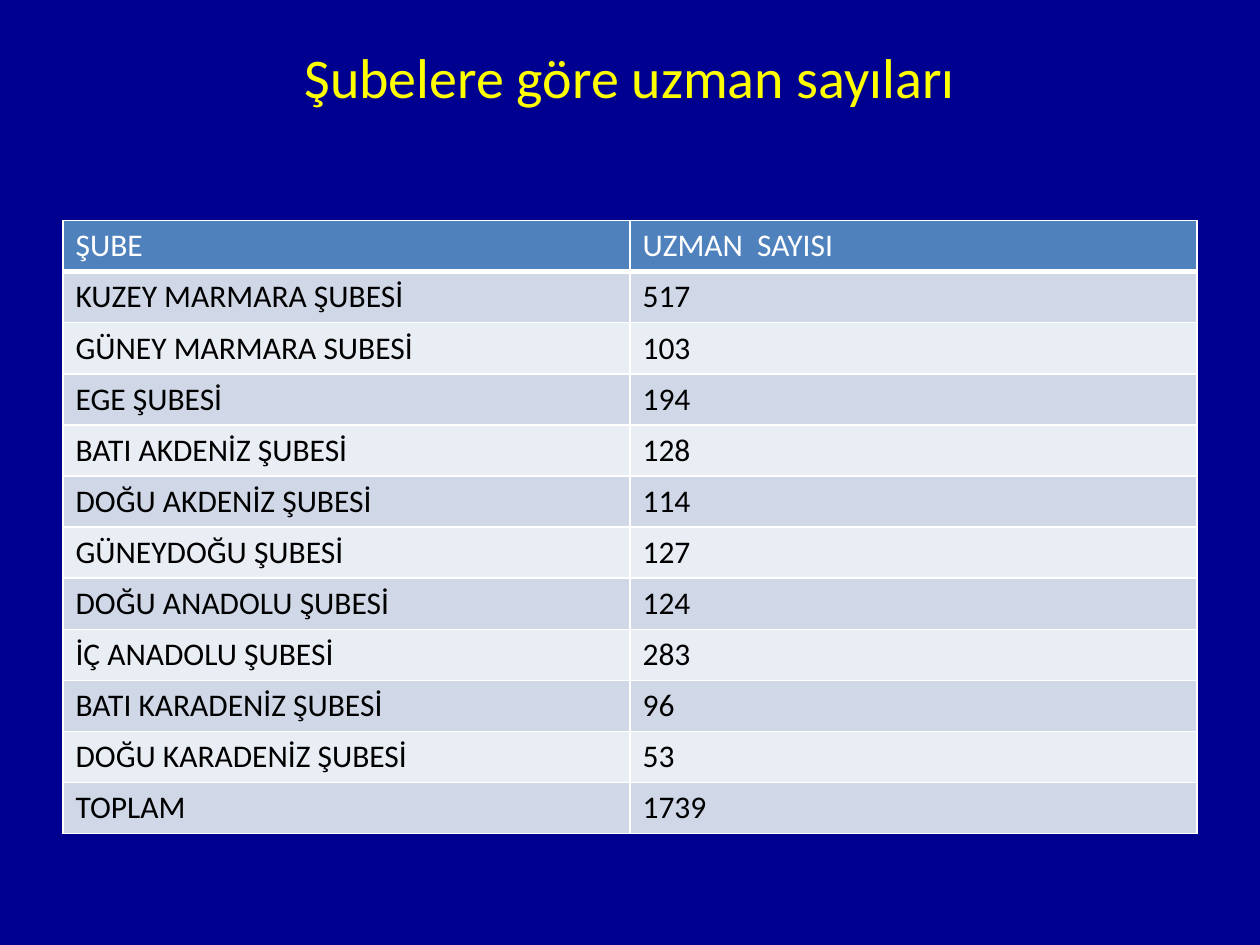
import pptx
import pptx.dml.color
import pptx.enum.text
import pptx.oxml.ns
import pptx.util
from lxml import etree

Inches = pptx.util.Inches
RGBColor = pptx.dml.color.RGBColor
PP_ALIGN = pptx.enum.text.PP_ALIGN
MSO_ANCHOR = pptx.enum.text.MSO_ANCHOR

NAVY = RGBColor(0x00, 0x00, 0x90)
YELLOW = RGBColor(0xFF, 0xFF, 0x00)
WHITE = RGBColor(0xFF, 0xFF, 0xFF)
BLACK = RGBColor(0x00, 0x00, 0x00)
HEADER_BLUE = RGBColor(0x4F, 0x81, 0xBD)
BANDS = (RGBColor(0xD0, 0xD8, 0xE8), RGBColor(0xE9, 0xED, 0xF4))

TITLE = "Şubelere göre uzman sayıları"
HEADINGS = ("ŞUBE", "UZMAN  SAYISI")
BRANCHES = [
    ("KUZEY MARMARA ŞUBESİ", "517"),
    ("GÜNEY MARMARA SUBESİ", "103"),
    ("EGE ŞUBESİ", "194"),
    ("BATI AKDENİZ ŞUBESİ", "128"),
    ("DOĞU AKDENİZ ŞUBESİ", "114"),
    ("GÜNEYDOĞU ŞUBESİ", "127"),
    ("DOĞU ANADOLU ŞUBESİ", "124"),
    ("İÇ ANADOLU ŞUBESİ", "283"),
    ("BATI KARADENİZ ŞUBESİ", "96"),
    ("DOĞU KARADENİZ ŞUBESİ", "53"),
    ("TOPLAM", "1739"),
]


def write(frame, text, size=18, color=BLACK, align=PP_ALIGN.LEFT):
    paragraph = frame.paragraphs[0]
    paragraph.alignment = align
    run = paragraph.add_run()
    run.text = text
    run.font.name = "Calibri"
    run.font.size = pptx.util.Pt(size)
    run.font.bold = False
    run.font.color.rgb = color


def add_borders(cell, bottom=1):
    qn = pptx.oxml.ns.qn
    properties = cell._tc.get_or_add_tcPr()
    for side, width in (("L", 1), ("R", 1), ("T", 1), ("B", bottom)):
        line = etree.SubElement(properties, qn("a:ln" + side), w=str(pptx.util.Pt(width)))
        fill = etree.SubElement(line, qn("a:solidFill"))
        etree.SubElement(fill, qn("a:srgbClr"), val=str(WHITE))


def add_title(slide):
    title = slide.shapes.title
    title.left, title.top = Inches(0.5), Inches(0.3)
    title.width, title.height = Inches(9), Inches(0.61)
    title.text_frame.vertical_anchor = MSO_ANCHOR.MIDDLE
    write(title.text_frame, TITLE, size=32, color=YELLOW, align=PP_ALIGN.CENTER)


def add_branch_table(slide):
    rows = [HEADINGS] + BRANCHES
    branch_table = slide.shapes.add_table(
        len(rows), len(HEADINGS), Inches(0.5), Inches(1.75), Inches(9), Inches(4.87)
    ).table
    for row_index, row in enumerate(rows):
        is_header = row_index == 0
        for column_index, text in enumerate(row):
            cell = branch_table.cell(row_index, column_index)
            add_borders(cell, bottom=3 if is_header else 1)
            cell.fill.solid()
            cell.fill.fore_color.rgb = HEADER_BLUE if is_header else BANDS[(row_index - 1) % 2]
            write(cell.text_frame, text, color=WHITE if is_header else BLACK)


def main():
    deck = pptx.Presentation()
    deck.slide_width, deck.slide_height = Inches(10), Inches(7.5)
    slide = deck.slides.add_slide(deck.slide_layouts[5])
    slide.background.fill.solid()
    slide.background.fill.fore_color.rgb = NAVY
    add_title(slide)
    add_branch_table(slide)
    deck.save("out.pptx")


if __name__ == "__main__":
    main()
